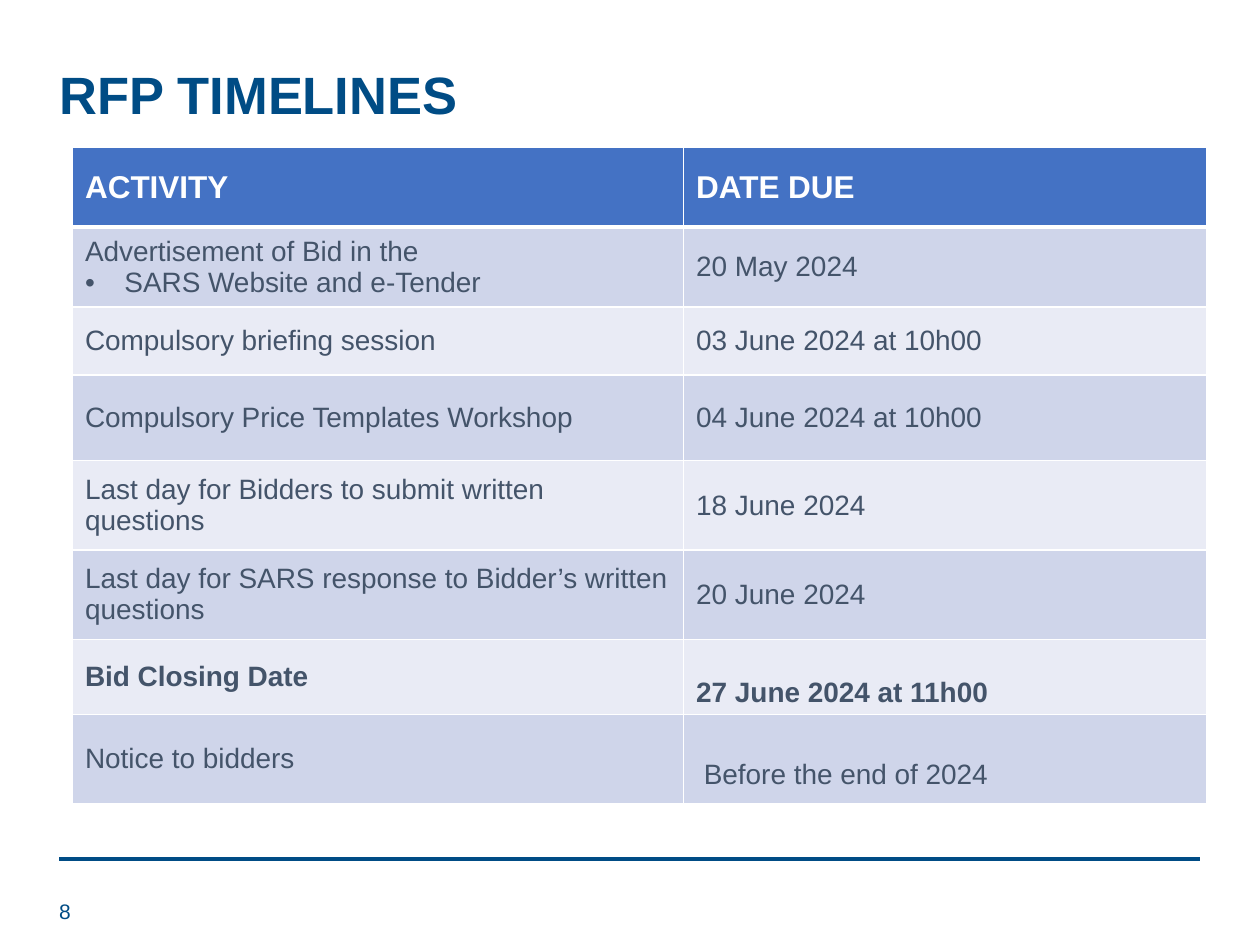
from lxml import etree
from pptx import Presentation
from pptx.dml.color import RGBColor
from pptx.enum.shapes import MSO_CONNECTOR
from pptx.enum.text import MSO_ANCHOR
from pptx.oxml.ns import qn
from pptx.util import Pt

NAVY, SLATE, WHITE = "004C85", "44546A", "FFFFFF"
HEADER_FILL, BANDS = "4472C4", ("CFD5EA", "E9EBF5")

TITLE = "RFP TIMELINES"
PAGE = "8"
HEADERS = ("ACTIVITY", "DATE DUE")
# Activity lines (any after the first are bullets), date due, row height
TIMELINE = [
    (["Advertisement of Bid in the", "SARS Website and e-Tender"], "20 May 2024", 44),
    (["Compulsory briefing session"], "03 June 2024 at 10h00", 38.9),
    (["Compulsory Price Templates Workshop"], "04 June 2024 at 10h00", 49),
    (["Last day for Bidders to submit written questions"], "18 June 2024", 51.1),
    (["Last day for SARS response to Bidder’s written questions"], "20 June 2024", 51.1),
    (["Bid Closing Date"], "27 June 2024 at 11h00", 42.9),
    (["Notice to bidders"], "Before the end of 2024", 51.1),
]
BOLD_ROW = 6
LOW_DATE_ROWS = (6, 7)
INDENTED_DATE_ROW = 7
HEADER_HEIGHT = 45.4
COLUMN_WIDTHS = (349.2, 298.8)


def rgb(value):
    return RGBColor.from_string(value)


def add_run(p, text, size, color, bold=False):
    r = p.add_run()
    r.text = text
    r.font.name = "Arial"
    r.font.size = Pt(size)
    r.font.bold = bold
    r.font.color.rgb = rgb(color)


def add_text(s, box, text, size, bold=False):
    tf = s.shapes.add_textbox(*map(Pt, box)).text_frame
    tf.word_wrap = True
    tf.vertical_anchor = MSO_ANCHOR.MIDDLE
    p = tf.paragraphs[0]
    add_run(p, text, size, NAVY, bold)
    return p


def add_bullet(p, indent):
    pPr = p._p.get_or_add_pPr()
    pPr.set("marL", str(Pt(indent)))
    pPr.set("indent", str(-Pt(indent)))
    etree.SubElement(pPr, qn("a:buFont"), typeface="Arial")
    etree.SubElement(pPr, qn("a:buChar"), char="•")


def set_borders(cell, bottom):
    tcPr = cell._tc.get_or_add_tcPr()
    widths = {"L": 1, "R": 1, "T": 1, "B": bottom}
    for i, (side, width) in enumerate(widths.items()):
        ln = etree.Element(qn(f"a:ln{side}"), w=str(Pt(width)))
        fill = etree.SubElement(ln, qn("a:solidFill"))
        etree.SubElement(fill, qn("a:srgbClr"), val=WHITE)
        tcPr.insert(i, ln)


def fill_cell(cell, lines, size, color, bold, fill, bottom=1):
    cell.fill.solid()
    cell.fill.fore_color.rgb = rgb(fill)
    cell.vertical_anchor = MSO_ANCHOR.MIDDLE
    set_borders(cell, bottom)
    tf = cell.text_frame
    for i, line in enumerate(lines):
        p = tf.add_paragraph() if i else tf.paragraphs[0]
        if i:
            add_bullet(p, 22.5)
        add_run(p, line, size, color, bold)


prs = Presentation()
prs.slide_width, prs.slide_height = Pt(720), Pt(540)
s = prs.slides.add_slide(prs.slide_layouts[6])

# Footer rule
rule = s.shapes.add_connector(MSO_CONNECTOR.STRAIGHT, Pt(34), Pt(491), Pt(686), Pt(491))
rule.line.color.rgb = rgb(NAVY)
rule.line.width = Pt(2)
etree.SubElement(rule._element.spPr, qn("a:effectLst"))

# Title and page number
add_text(s, (26.8, 34.6, 620.6, 41.8), TITLE, 30, bold=True).line_spacing = 0.9
add_text(s, (26.8, 506.2, 33, 28.8), PAGE, 12)

# Timeline table
heights = [HEADER_HEIGHT] + [height for _, _, height in TIMELINE]
table = s.shapes.add_table(len(heights), len(COLUMN_WIDTHS), Pt(41.4), Pt(84.4),
                           Pt(sum(COLUMN_WIDTHS)), Pt(sum(heights))).table
for column, width in zip(table.columns, COLUMN_WIDTHS):
    column.width = Pt(width)
for row, height in zip(table.rows, heights):
    row.height = Pt(height)

for c, text in enumerate(HEADERS):
    fill_cell(table.cell(0, c), [text], 18, WHITE, True, HEADER_FILL, bottom=3)
for n, (activity, date, _) in enumerate(TIMELINE, 1):
    for c, lines in enumerate((activity, [date])):
        fill_cell(table.cell(n, c), lines, 16, SLATE, n == BOLD_ROW, BANDS[(n - 1) % 2])

# Dates that sit low in their cells
for n in LOW_DATE_ROWS:
    table.cell(n, 1).margin_top = Pt(20)
    table.cell(n, 1).margin_bottom = Pt(2)
table.cell(INDENTED_DATE_ROW, 1).margin_left = Pt(11.6)

prs.save("out.pptx")
